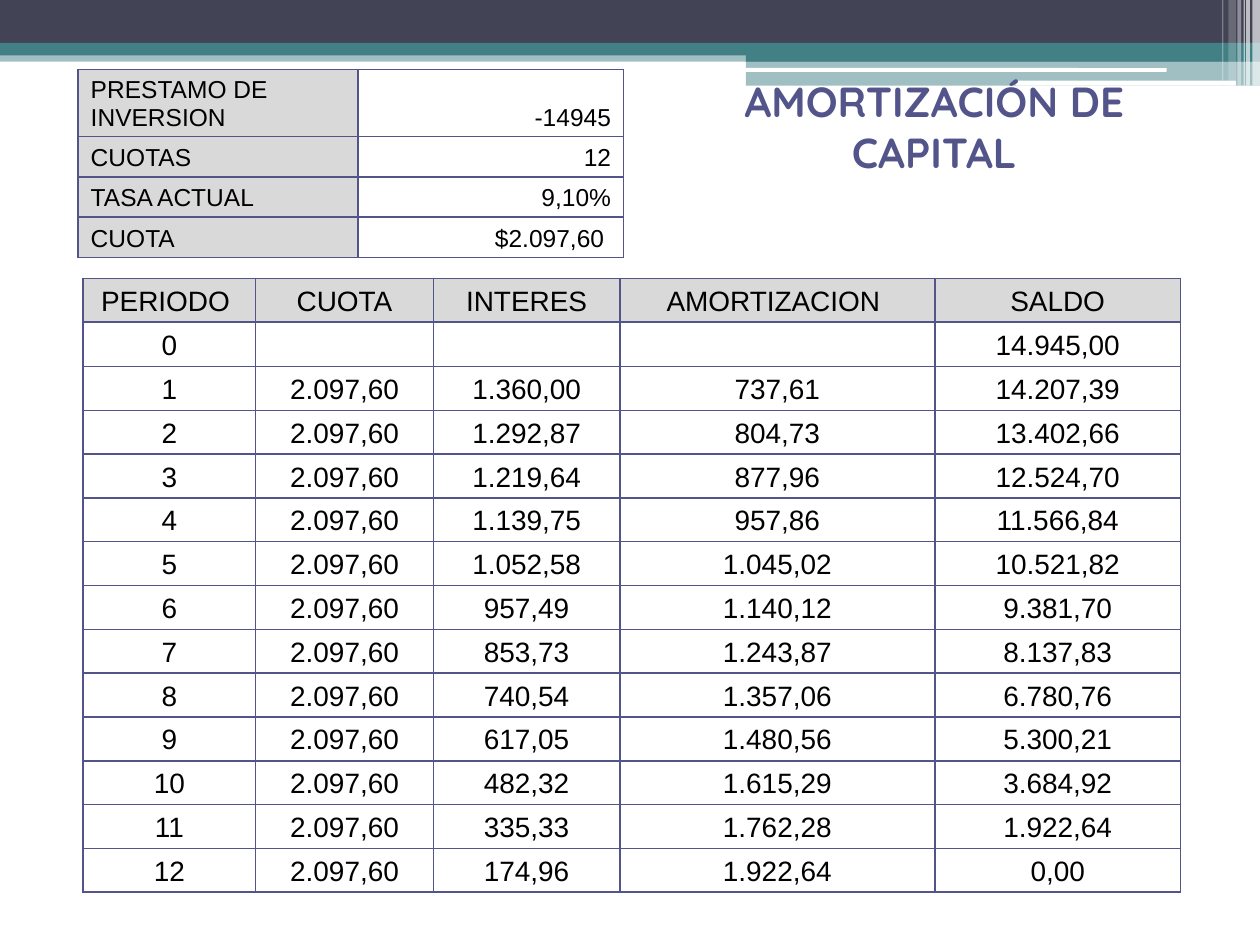
import dataclasses

import lxml.etree
import pptx
import pptx.dml.color
import pptx.enum.shapes
import pptx.enum.text
import pptx.oxml.ns
import pptx.util

ALIGN = pptx.enum.text.PP_ALIGN
ANCHOR = pptx.enum.text.MSO_ANCHOR
SHAPE = pptx.enum.shapes.MSO_SHAPE
qn = pptx.oxml.ns.qn


@dataclasses.dataclass(frozen=True)
class Theme:
    dark: str = "424456"
    teal: str = "438086"
    white: str = "FFFFFF"
    accent: str = "53548A"
    label: str = "D9D9D9"
    text: str = "000000"
    title_font: str = "Quicksand"
    body_font: str = "Arial"
    title_size: int = 24
    loan_size: int = 14
    schedule_size: int = 16


def rgb(value):
    return pptx.dml.color.RGBColor.from_string(value)


class SlideBuilder:
    """Places elements on a grid of 100 columns by 75 rows."""

    def __init__(self, prs, theme):
        self.theme = theme
        self.unit_x = prs.slide_width / 100
        self.unit_y = prs.slide_height / 75
        self.s = prs.slides.add_slide(prs.slide_layouts[5])

    def place(self, x, y, w, h):
        return (round(x * self.unit_x), round(y * self.unit_y),
                round(w * self.unit_x), round(h * self.unit_y))

    def style(self, p, font, size, color, bold=False):
        for r in p.runs:
            r.font.name, r.font.size, r.font.bold = font, pptx.util.Pt(size), bold
            r.font.color.rgb = rgb(color)

    def bar(self, x, y, w, h, color, opacity=100, rounded=False):
        kind = SHAPE.ROUNDED_RECTANGLE if rounded else SHAPE.RECTANGLE
        sp = self.s.shapes.add_shape(kind, *self.place(x, y, w, h))
        sp.shadow.inherit = False
        sp.line.fill.background()
        sp.fill.solid()
        sp.fill.fore_color.rgb = rgb(color)
        if opacity < 100:
            clr = sp.fill._xPr.find(".//" + qn("a:srgbClr"))
            lxml.etree.SubElement(clr, qn("a:alpha"), val=str(opacity * 1000))

    def title(self, text, x, y, w, h):
        sp = self.s.shapes.title
        sp.left, sp.top, sp.width, sp.height = self.place(x, y, w, h)
        tf = sp.text_frame
        tf.text = text
        tf.word_wrap = True
        tf.auto_size = pptx.enum.text.MSO_AUTO_SIZE.SHAPE_TO_FIT_TEXT
        tf.vertical_anchor = ANCHOR.TOP
        p = tf.paragraphs[0]
        p.alignment = ALIGN.CENTER
        self.style(p, self.theme.title_font, self.theme.title_size,
                   self.theme.accent, bold=True)
        self.s.shapes._spTree.append(sp._element)  # bring to front

    def borders(self, cell):
        tcPr = cell._tc.get_or_add_tcPr()
        for i, side in enumerate(("lnL", "lnR", "lnT", "lnB")):
            ln = lxml.etree.Element(qn("a:" + side), w=str(pptx.util.Pt(1)))
            fill = lxml.etree.SubElement(ln, qn("a:solidFill"))
            lxml.etree.SubElement(fill, qn("a:srgbClr"), val=self.theme.accent)
            tcPr.insert(i, ln)

    def cell(self, cell, text, size, align, label, hanging):
        cell.vertical_anchor = ANCHOR.BOTTOM
        cell.margin_top = cell.margin_bottom = pptx.util.Inches(0.04)
        cell.text_frame.text = text
        p = cell.text_frame.paragraphs[0]
        p.alignment = align
        self.style(p, self.theme.body_font, size, self.theme.text)
        if hanging:
            indent = pptx.util.Inches(hanging)
            p._p.get_or_add_pPr().set("marL", str(indent))
            p._p.get_or_add_pPr().set("indent", str(-indent))
        if not text:  # keeps an empty cell from growing its row
            lxml.etree.SubElement(p._p, qn("a:endParaRPr"), sz=str(size * 100))
        if label:
            cell.fill.solid()
            cell.fill.fore_color.rgb = rgb(self.theme.label)
        else:
            cell.fill.background()
        self.borders(cell)

    def table(self, rows, x, y, widths, heights, size, aligns, is_label, hanging=0):
        frame = self.s.shapes.add_table(
            len(rows), len(widths), *self.place(x, y, sum(widths), sum(heights)))
        tbl = frame.table
        tbl.first_row = tbl.horz_banding = False
        for col, width in zip(tbl.columns, widths):
            col.width = round(width * self.unit_x)
        for row, height in zip(tbl.rows, heights):
            row.height = round(height * self.unit_y)
        for i, values in enumerate(rows):
            for j, text in enumerate(values):
                self.cell(tbl.cell(i, j), text, size, aligns[j], is_label(i, j), hanging)


LOAN = [
    ("PRESTAMO DE INVERSION", "-14945"),
    ("CUOTAS", "12"),
    ("TASA ACTUAL", "9,10%"),
    ("CUOTA", "$2.097,60 "),
]
HEADER = ("PERIODO ", "CUOTA", "INTERES", "AMORTIZACION ", "SALDO")
PAYMENT = "2.097,60"
# Interest, amortization and balance of each period
PERIODS = [
    ("1.360,00", "737,61", "14.207,39"),
    ("1.292,87", "804,73", "13.402,66"),
    ("1.219,64", "877,96", "12.524,70"),
    ("1.139,75", "957,86", "11.566,84"),
    ("1.052,58", "1.045,02", "10.521,82"),
    ("957,49", "1.140,12", "9.381,70"),
    ("853,73", "1.243,87", "8.137,83"),
    ("740,54", "1.357,06", "6.780,76"),
    ("617,05", "1.480,56", "5.300,21"),
    ("482,32", "1.615,29", "3.684,92"),
    ("335,33", "1.762,28", "1.922,64"),
    ("174,96", "1.922,64", "0,00"),
]


def main():
    prs = pptx.Presentation()
    prs.slide_width, prs.slide_height = pptx.util.Inches(10), pptx.util.Inches(7.5)
    theme = Theme()
    b = SlideBuilder(prs, theme)

    # Header bands
    b.bar(0, 4, 100, 0.9, theme.teal, 50)
    b.bar(0, 0, 100, 3.4, theme.dark)
    b.bar(0, 3.4, 100, 1, theme.teal)
    b.bar(59.2, 3.9, 40.8, 1, theme.teal)
    b.bar(59.2, 4.8, 40.8, 2, theme.teal, 50)
    b.bar(59.1, 5.4, 33.5, 0.3, theme.white, rounded=True)
    b.bar(80.6, 6.4, 17.5, 0.4, theme.white, rounded=True)

    # Light stripes in the corner
    for x, w, h, opacity in [(99.4, 0.6, 6.8, 65), (98.9, 0.3, 6.8, 65),
                             (98.7, 0.1, 6.8, 60), (98.2, 0.3, 6.8, 40),
                             (97.5, 0.6, 6.4, 20), (97, 0.1, 6.4, 30)]:
        b.bar(x, 0, w, h, theme.white, opacity)

    # Loan terms
    b.table(LOAN, 6.2, 5.5, [22.2, 21.1], [5.35] + [3.2] * 3, theme.loan_size,
            [ALIGN.LEFT, ALIGN.RIGHT], lambda i, j: j == 0)

    # Amortization schedule
    schedule = [HEADER, ("0", "", "", "", "14.945,00")]
    schedule += [(str(n), PAYMENT, *values) for n, values in enumerate(PERIODS, 1)]
    b.table(schedule, 6.6, 22.1, [13.7, 14.1, 14.8, 25, 19.5],
            [48.7 / len(schedule)] * len(schedule), theme.schedule_size,
            [ALIGN.CENTER] * len(HEADER), lambda i, j: i == 0, hanging=0.38)

    # Title
    b.title("AMORTIZACIÓN DE CAPITAL", 57, 5.5, 34.3, 9.1)

    prs.save("out.pptx")


if __name__ == "__main__":
    main()
